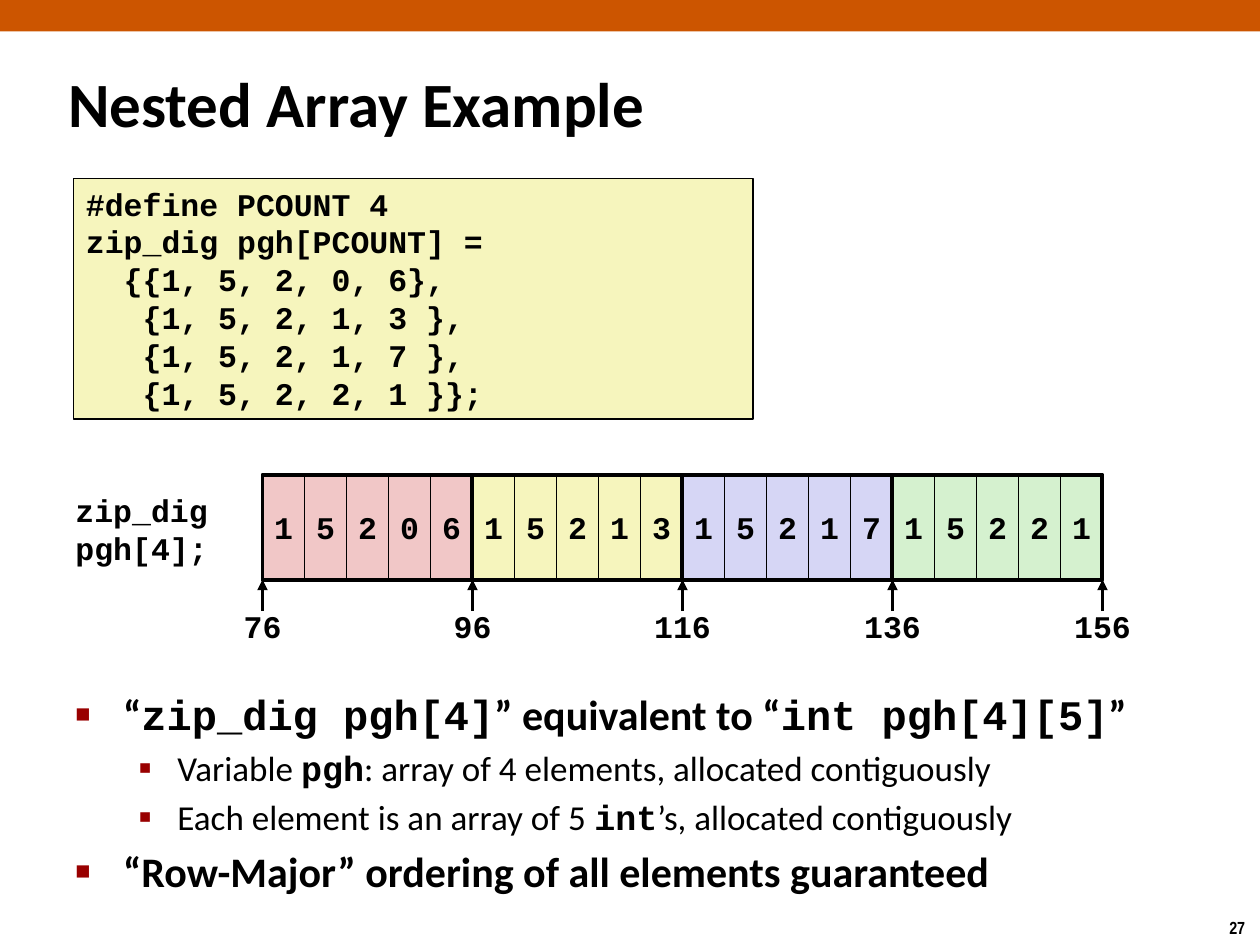
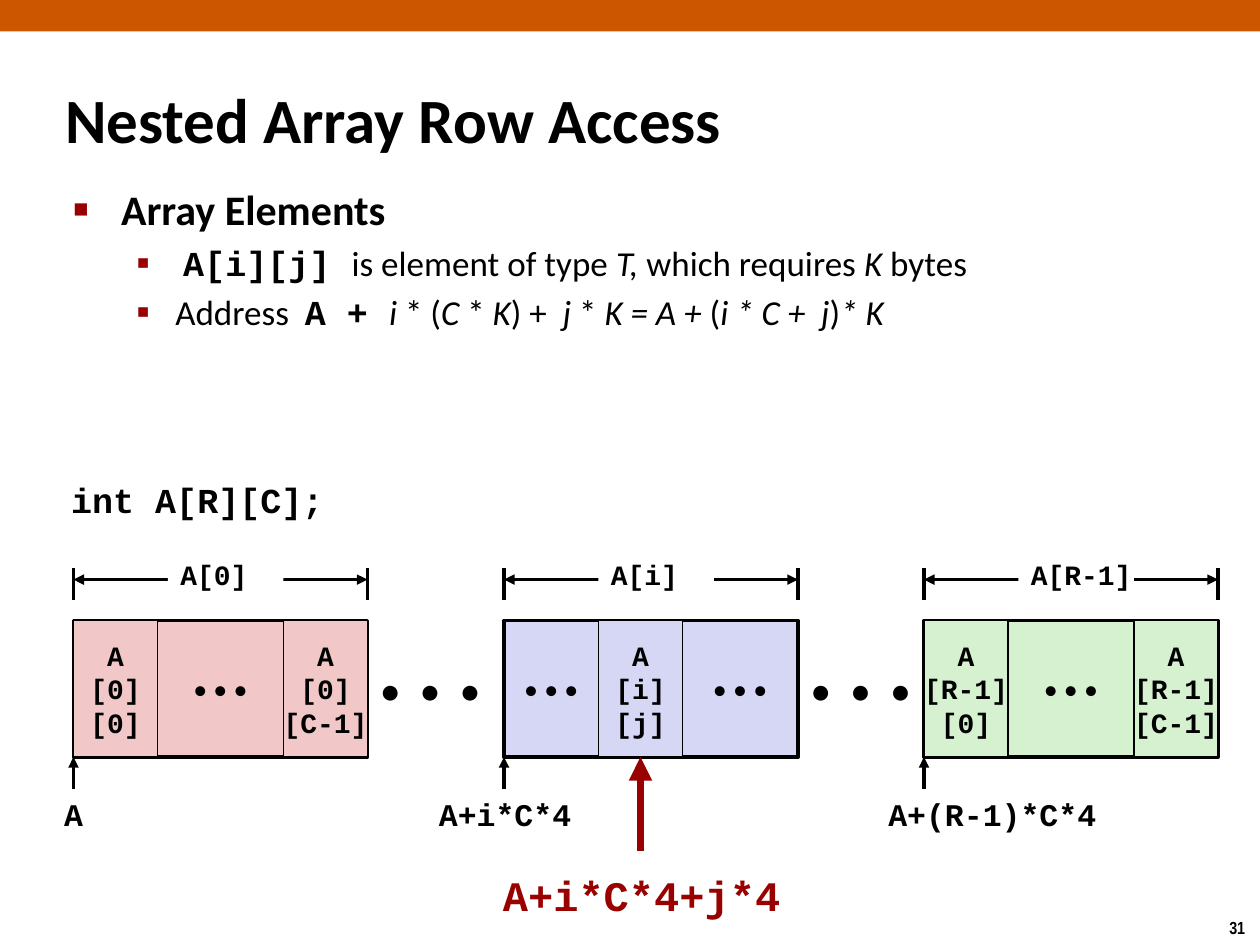
from lxml import etree
from pptx import Presentation, util as u
from pptx.dml.color import RGBColor
from pptx.enum import shapes, text
from pptx.oxml import ns

ORANGE = RGBColor(0xCC, 0x55, 0x00)
RED = RGBColor(0x99, 0x00, 0x00)
BLACK = RGBColor(0, 0, 0)
WHITE = RGBColor(0xFF, 0xFF, 0xFF)
PINK = RGBColor(0xF1, 0xC7, 0xC7)
YELLOW = RGBColor(0xF6, 0xF5, 0xBD)
LILAC = RGBColor(0xD6, 0xD6, 0xF5)
GREEN = RGBColor(0xD5, 0xF1, 0xCF)

CODE = {"name": "Courier New", "bold": True}
ITALIC = {"italic": True}
CODE_16 = {**CODE, "size": u.Pt(16)}
CODE_18 = {**CODE, "size": u.Pt(18)}
CODE_20 = {**CODE, "size": u.Pt(20)}
CODE_24 = {**CODE, "size": u.Pt(24)}
TITLE = {"name": "Calibri", "size": u.Pt(36), "bold": True}
NUMBER = {"name": "Arial Narrow", "size": u.Pt(10), "bold": True}
DOTS = {"name": "Calibri", "size": u.Pt(16), "bold": False}
BIG_DOTS = {**DOTS, "size": u.Pt(24)}
LEFT, CENTER = text.PP_ALIGN.LEFT, text.PP_ALIGN.CENTER
TOP, MIDDLE = text.MSO_ANCHOR.TOP, text.MSO_ANCHOR.MIDDLE

# font, bullet character, bullet size, left margin, hanging indent, space before
LEVELS = [
    ({"name": "Calibri", "size": u.Pt(24), "bold": True}, "■", 60, 0.38, 0.38, 4.8),
    ({"name": "Calibri", "size": u.Pt(20), "bold": False}, "▪", 110, 0.81, 0.31, 4),
]

deck = Presentation()
deck.slide_width, deck.slide_height = u.Inches(10), u.Inches(7.5)
COLUMNS = 120
UNIT = deck.slide_width / COLUMNS  # rows have the same size as columns


def add_block(page, place, lines=(), look=CODE_18, fill=None, line=None, align=LEFT,
              anchor=MIDDLE, color=BLACK, wrap=False, box=None):
    """Put a rectangle, or bare text if it has no fill and line, on the grid.

    Each line is a string or a list of (string, font changes) runs.
    """
    left, top, width, height = (round(part * UNIT) for part in place)
    if box is None and (fill or line):
        box = page.shapes.add_shape(shapes.MSO_SHAPE.RECTANGLE, left, top, width, height)
        box.shadow.inherit = False
        box.fill.background()
        box.line.fill.background()
    elif box is None:
        box = page.shapes.add_textbox(left, top, width, height)
    box.left, box.top, box.width, box.height = left, top, width, height
    if fill:
        box.fill.solid()
        box.fill.fore_color.rgb = fill
    if line:
        box.line.color.rgb, box.line.width = BLACK, u.Pt(line)
    frame = box.text_frame
    frame.auto_size = text.MSO_AUTO_SIZE.NONE
    frame.word_wrap, frame.vertical_anchor = wrap, anchor
    for index, content in enumerate(lines):
        para = frame.add_paragraph() if index else frame.paragraphs[0]
        para.alignment = align
        for words, changes in [(content, {})] if isinstance(content, str) else content:
            span = para.add_run()
            span.text = words
            span.font.color.rgb = color
            for name, value in {**look, **changes}.items():
                setattr(span.font, name, value)
    return box


def add_line(page, start, end, heads=(), color=BLACK, width=2):
    """Draw a line on the grid; heads holds headEnd and/or tailEnd."""
    ends = [round(part * UNIT) for part in (*start, *end)]
    line = page.shapes.add_connector(shapes.MSO_CONNECTOR.STRAIGHT, *ends)
    line.line.color.rgb, line.line.width = color, u.Pt(width)
    for head in heads:
        etree.SubElement(line.line._get_or_add_ln(), ns.qn(f"a:{head}"), type="triangle")
    etree.SubElement(line._element.spPr, ns.qn("a:effectLst"))
    return line


# Titles, page numbers and bullets
OUTLINES = [
    ("Nested Array Example", (5.3, 6, 84, 7.5), "27", (6, 65, 108, 25), [
        (0, [("“", {}), ("zip_dig pgh[4]", CODE), ("” equivalent to “", {}),
             ("int pgh[4][5]", CODE), ("”", {})]),
        (1, [("Variable ", {}), ("pgh", CODE),
             (": array of 4 elements, allocated contiguously", {})]),
        (1, [("Each element is an array of 5 ", {}), ("int", CODE),
             ("’s, allocated contiguously", {})]),
        (0, [("“Row-Major” ordering of all elements guaranteed", {})]),
    ]),
    ("Nested Array Row Access", (5, 7.5, 91, 7.5), "31", (5.8, 16.9, 102, 19), [
        (0, [("Array Elements", {})]),
        (1, [(" ", {}), ("A[i][j] ", CODE), ("is element of type ", {}), ("T, ", ITALIC),
             ("which requires ", {}), ("K", ITALIC), (" bytes", {})]),
        (1, [("Address  ", {}), ("A + ", CODE), ("i ", ITALIC), ("* (", {}), ("C ", ITALIC),
             ("* ", {}), ("K", ITALIC), (") +  ", {}), ("j", ITALIC), (" * ", {}),
             ("K = A + ", ITALIC), ("(", {}), ("i * C +  j", ITALIC), (")", {}),
             ("* K", ITALIC)]),
    ]),
]
pages = []
for title, title_place, number, body_place, bullets in OUTLINES:
    page = deck.slides.add_slide(deck.slide_layouts.get_by_name("Title Only"))
    pages.append(page)
    add_block(page, (0, 0, COLUMNS, 3), fill=ORANGE)
    add_block(page, (115.9, 86.75, 4.1, 3.25), [number], NUMBER, anchor=TOP)
    add_block(page, title_place, [title], TITLE, wrap=True, box=page.shapes.title)
    lines = [[(words, {**LEVELS[level][0], **changes}) for words, changes in runs]
             for level, runs in bullets]
    body = add_block(page, body_place, lines, anchor=TOP, wrap=True)
    for para, (level, _) in zip(body.text_frame.paragraphs, bullets):
        _, mark, percent, margin, hanging, before = LEVELS[level]
        para.level, para.space_before = level, u.Pt(before)
        props = para._p.get_or_add_pPr()
        props.set("marL", str(u.Inches(margin)))
        props.set("indent", str(-u.Inches(hanging)))
        bullet_color = etree.SubElement(props, ns.qn("a:buClr"))
        etree.SubElement(bullet_color, ns.qn("a:srgbClr"), val=str(RED))
        etree.SubElement(props, ns.qn("a:buSzPct"), val=str(percent * 1000))
        etree.SubElement(props, ns.qn("a:buFont"), typeface="Arial")
        etree.SubElement(props, ns.qn("a:buChar"), char=mark)
example, access = pages

# Nested array example: the code and the memory strip
add_block(example, (7, 17, 64.7, 22.9), [
    "#define PCOUNT 4",
    "zip_dig pgh[PCOUNT] =",
    "  {{1, 5, 2, 0, 6},",
    "   {1, 5, 2, 1, 3 },",
    "   {1, 5, 2, 1, 7 },",
    "   {1, 5, 2, 2, 1 }};",
], fill=YELLOW, line=1, anchor=TOP, wrap=True)
add_block(example, (6, 46.2, 15, 8.4), ["zip_dig", "pgh[4];"], anchor=TOP)

ZIP_CODES = [("15206", PINK), ("15213", YELLOW), ("15217", LILAC), ("15221", GREEN)]
STRIP_LEFT, STRIP_TOP, STRIP_HEIGHT, CELL = 25, 45.2, 10, 4
ZIP_WIDTH = 5 * CELL
STRIP_BOTTOM = STRIP_TOP + STRIP_HEIGHT
for row, (digits, color) in enumerate(ZIP_CODES):
    left = STRIP_LEFT + row * ZIP_WIDTH
    for column, digit in enumerate(digits):
        add_block(example, (left + column * CELL, STRIP_TOP, CELL, STRIP_HEIGHT), [digit],
                  fill=color, line=1, align=CENTER)
for row in range(len(ZIP_CODES)):
    add_block(example, (STRIP_LEFT + row * ZIP_WIDTH, STRIP_TOP, ZIP_WIDTH, STRIP_HEIGHT),
              line=2.25)
for row in range(len(ZIP_CODES) + 1):
    x = STRIP_LEFT + row * ZIP_WIDTH
    add_line(example, (x, STRIP_BOTTOM + 3), (x, STRIP_BOTTOM), ["tailEnd"])
    add_block(example, (x - 4, STRIP_BOTTOM + 2, 8, 4.8), [str(76 + 20 * row)],
              align=CENTER, anchor=TOP)

# Nested array row access: three rows of the array in memory
add_block(access, (5.6, 45, 26.4, 5.2), ["int A[R][C];"], CODE_20, anchor=TOP)

ROW_TOP, ROW_WIDTH, ROW_HEIGHT = 59.1, 28, 13
ROW_BOTTOM = ROW_TOP + ROW_HEIGHT
GAP = None  # stands for the elements left out
# left, colour, name, (width, lines) of its cells, address, centre of the address
ARRAY_ROWS = [
    (7, PINK, "A[0]", [(8, ["A", "[0]", "[0]"]), (12, GAP), (8, ["A", "[0]", "[C-1]"])],
     "A", 7),
    (48, LILAC, "A[i]", [(9, GAP), (8, ["A", "[i]", "[j]"]), (11, GAP)],
     "A+i*C*4", 48.1),
    (88, GREEN, "A[R-1]", [(8, ["A", "[R-1]", "[0]"]), (12, GAP), (8, ["A", "[R-1]", "[C-1]"])],
     "A+(R-1)*C*4", 94.5),
]
for left in (35, 76):
    add_block(access, (left, ROW_TOP, 13, ROW_HEIGHT), ["•  •  •"], BIG_DOTS)
for left, color, name, cells, address, address_center in ARRAY_ROWS:
    right = left + ROW_WIDTH
    add_block(access, (left, ROW_TOP, ROW_WIDTH, ROW_HEIGHT), fill=color, line=2.25)
    x = left
    for width, lines in cells:
        place = (x, ROW_TOP, width, ROW_HEIGHT)
        if lines is GAP:
            add_block(access, place, ["• • •"], DOTS, align=CENTER)
        else:
            cell = add_block(access, place, lines, CODE_16, fill=color, line=1, align=CENTER)
            if "[j]" in lines:
                target = cell
        x += width
    for edge in (left, right):
        add_line(access, (edge, 54.1), (edge, 57.1))
    add_line(access, (left, 55.2), (right, 55.2), ["headEnd", "tailEnd"])
    add_block(access, (left + 9, 52.2, 11, 5), [name], CODE_16, fill=WHITE)
    add_line(access, (left, ROW_BOTTOM + 3), (left, ROW_BOTTOM), ["tailEnd"])
    add_block(access, (address_center - 12, ROW_BOTTOM + 3, 24, 4.8), [address],
              align=CENTER, anchor=TOP)

pointer = add_line(access, (61, 81), (61, ROW_BOTTOM), ["tailEnd"], RED, 4.5)
pointer.end_connect(target, 2)
add_block(access, (44.2, 82.2, 33.8, 6), ["A+i*C*4+j*4"], CODE_24, align=CENTER,
          anchor=TOP, color=RED)

deck.save("out.pptx")
